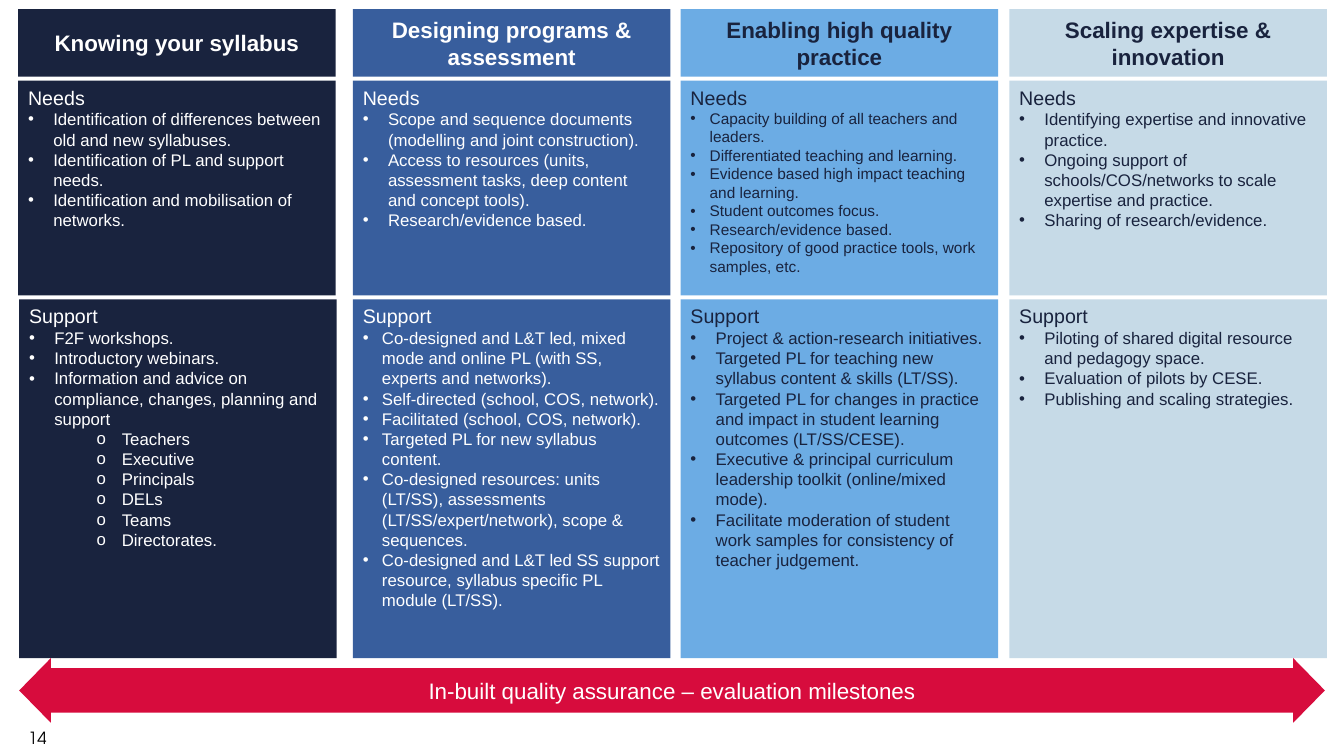
from dataclasses import dataclass, field

from lxml.etree import SubElement
from pptx import Presentation
from pptx.dml.color import RGBColor
from pptx.enum.shapes import MSO_SHAPE
from pptx.enum.text import MSO_ANCHOR, PP_ALIGN
from pptx.oxml.ns import qn
from pptx.util import Inches, Pt

COLORS = {"navy": "19233E", "blue": "385E9D", "sky": "6CACE4", "pale": "C6DAE7",
          "red": "D70C3D", "white": "FFFFFF", "black": "000000"}
COLUMN_WIDTH = 3.15
HEADER_ROW, NEEDS_ROW, SUPPORT_ROW = (0.09, 0.67), (0.8, 2.13), (2.97, 3.56)
SUB_INDENT, SUB_HANGING = 0.92, 0.25


@dataclass
class Panel:
    bullets: list
    sub_bullets: list = field(default_factory=list)
    size: int = 12
    hanging: float = 0.25
    shift: float = 0


@dataclass
class Column:
    left: float
    title: str
    fill: str
    text_color: str
    needs: Panel
    support: Panel


COLUMNS = [
    Column(0.18, "Knowing your syllabus", "navy", "white",
           Panel(["Identification of differences between old and new syllabuses.",
                  "Identification of PL and support needs.",
                  "Identification and mobilisation of networks."]),
           Panel(["F2F workshops.",
                  "Introductory webinars.",
                  "Information and advice on compliance, changes, planning and support"],
                 ["Teachers", "Executive", "Principals", "DELs", "Teams", "Directorates."],
                 shift=0.01)),
    Column(3.5, "Designing programs & assessment", "blue", "white",
           Panel(["Scope and sequence documents (modelling and joint construction).",
                  "Access to resources (units, assessment tasks, deep content and concept tools).",
                  "Research/evidence based."]),
           Panel(["Co-designed and L&T led, mixed mode and online PL "
                  "(with SS, experts and networks).",
                  "Self-directed (school, COS, network).",
                  "Facilitated (school, COS, network).",
                  "Targeted PL for new syllabus content.",
                  "Co-designed resources: units (LT/SS), assessments "
                  "(LT/SS/expert/network), scope & sequences.",
                  "Co-designed and L&T led SS support resource, "
                  "syllabus specific PL module (LT/SS)."],
                 hanging=0.19)),
    Column(6.75, "Enabling high quality practice", "sky", "navy",
           Panel(["Capacity building of all teachers and leaders.",
                  "Differentiated teaching and learning.",
                  "Evidence based high impact teaching and learning.",
                  "Student outcomes focus.",
                  "Research/evidence based.",
                  "Repository of good practice tools, work samples, etc."],
                 size=11, hanging=0.19),
           Panel(["Project & action-research initiatives.",
                  "Targeted PL for teaching new syllabus content & skills (LT/SS).",
                  "Targeted PL for changes in practice and impact in student "
                  "learning outcomes (LT/SS/CESE).",
                  "Executive & principal curriculum leadership toolkit (online/mixed mode).",
                  "Facilitate moderation of student work samples for consistency "
                  "of teacher judgement."])),
    Column(10.01, "Scaling expertise & innovation", "pale", "navy",
           Panel(["Identifying expertise and innovative practice.",
                  "Ongoing support of schools/COS/networks to scale expertise and practice.",
                  "Sharing of research/evidence."]),
           Panel(["Piloting of shared digital resource and pedagogy space.",
                  "Evaluation of pilots by CESE.",
                  "Publishing and scaling strategies."])),
]


def add_block(slide, preset, box, fill, anchor):
    shape = slide.shapes.add_shape(preset, *map(Inches, box))
    shape.shadow.inherit = False
    shape.fill.solid()
    shape.fill.fore_color.rgb = RGBColor.from_string(COLORS[fill])
    shape.line.fill.background()
    shape.text_frame.word_wrap = True
    shape.text_frame.vertical_anchor = anchor
    return shape


def write(paragraph, text, size, color, align=PP_ALIGN.LEFT, bold=False, font="Arial"):
    paragraph.alignment = align
    run = paragraph.add_run()
    run.text = text
    run.font.name = font
    run.font.size = Pt(size)
    run.font.bold = bold
    run.font.color.rgb = RGBColor.from_string(COLORS[color])


def add_bullet(text_frame, text, size, color, symbol, indent, hanging, level=0):
    paragraph = text_frame.add_paragraph()
    paragraph.level = level
    properties = paragraph._p.get_or_add_pPr()
    properties.set("marL", str(Inches(indent)))
    properties.set("indent", str(-Inches(hanging)))
    SubElement(properties, qn("a:buFont"), typeface="Arial")
    SubElement(properties, qn("a:buChar"), char=symbol)
    write(paragraph, text, size, color)


def add_panel(slide, box, heading, panel, fill, color):
    shape = add_block(slide, MSO_SHAPE.RECTANGLE, box, fill, MSO_ANCHOR.TOP)
    text_frame = shape.text_frame
    write(text_frame.paragraphs[0], heading, 14, color)
    for text in panel.bullets:
        add_bullet(text_frame, text, panel.size, color, "•", panel.hanging, panel.hanging)
    for text in panel.sub_bullets:
        add_bullet(text_frame, text, panel.size, color, "o", SUB_INDENT, SUB_HANGING, level=1)


def add_column(slide, column):
    def row_box(row, shift=0):
        top, height = row
        return column.left + shift, top, COLUMN_WIDTH, height

    header = add_block(slide, MSO_SHAPE.RECTANGLE, row_box(HEADER_ROW),
                       column.fill, MSO_ANCHOR.MIDDLE)
    write(header.text_frame.paragraphs[0], column.title, 16, column.text_color,
          PP_ALIGN.CENTER, bold=True)
    for heading, panel, row in (("Needs", column.needs, NEEDS_ROW),
                                ("Support", column.support, SUPPORT_ROW)):
        add_panel(slide, row_box(row, panel.shift), heading, panel,
                  column.fill, column.text_color)


def add_milestone_arrow(slide, box):
    arrow = add_block(slide, MSO_SHAPE.LEFT_RIGHT_ARROW, box, "red", MSO_ANCHOR.MIDDLE)
    arrow.adjustments[0] = 0.69
    arrow.adjustments[1] = 0.49
    write(arrow.text_frame.paragraphs[0],
          "In-built quality assurance – evaluation milestones", 16, "white", PP_ALIGN.CENTER)


def add_page_number(slide, box):
    text_box = slide.shapes.add_textbox(*map(Inches, box))
    text_box.text_frame.word_wrap = True
    write(text_box.text_frame.paragraphs[0], "14", 12, "black", font="TeX Gyre Adventor")


def main():
    presentation = Presentation()
    presentation.slide_width = Inches(13.33)
    presentation.slide_height = Inches(7.5)
    blank_layout = presentation.slide_layouts[6]
    slide = presentation.slides.add_slide(blank_layout)
    for column in COLUMNS:
        add_column(slide, column)
    add_milestone_arrow(slide, (0.19, 6.53, 12.95, 0.64))
    add_page_number(slide, (0.18, 7.17, 0.52, 0.4))
    presentation.save("out.pptx")


if __name__ == "__main__":
    main()
